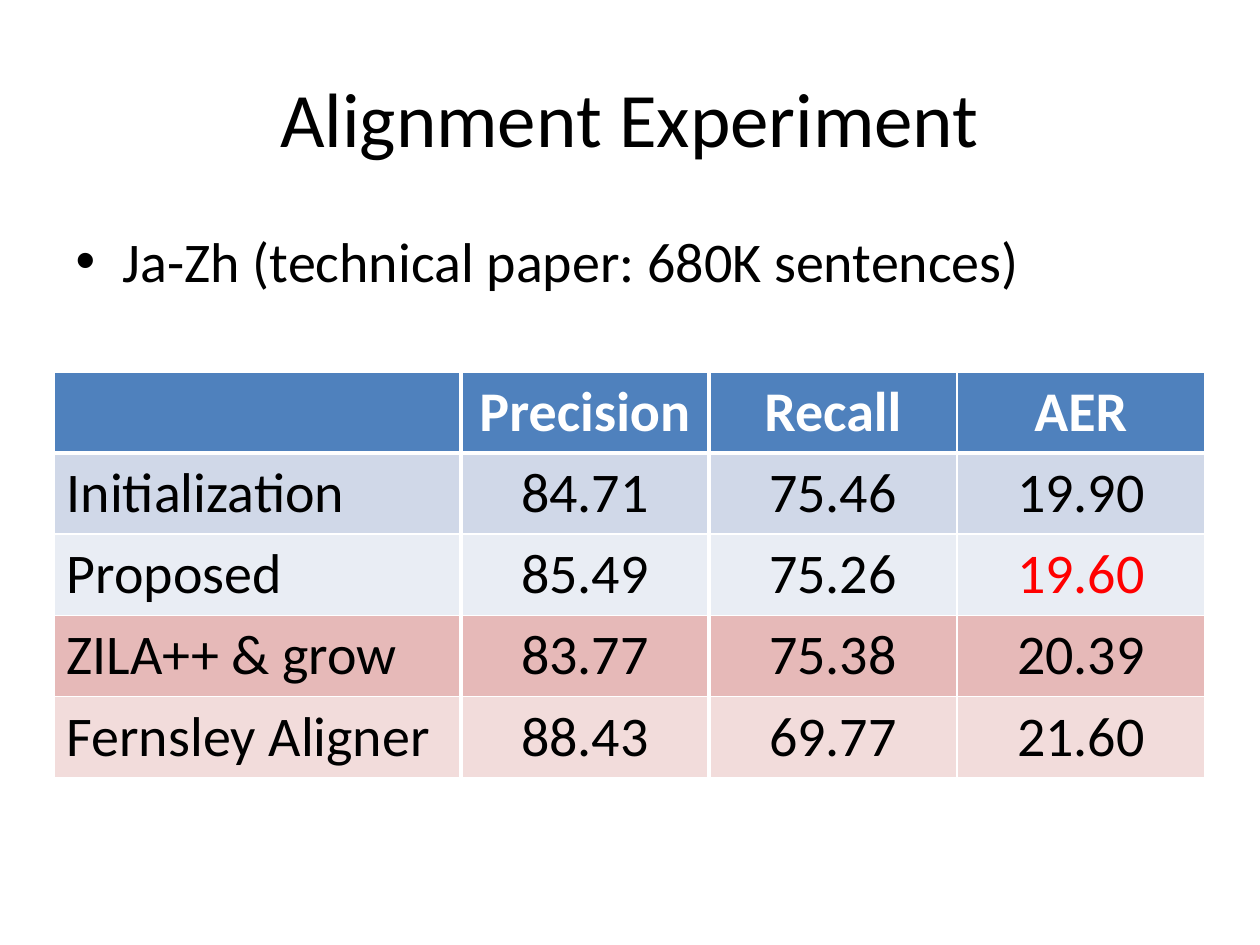
"""Build a slide comparing word alignment results in a table."""
from dataclasses import dataclass

from lxml.etree import SubElement
from pptx import Presentation
from pptx.dml.color import RGBColor
from pptx.enum.text import MSO_ANCHOR, PP_ALIGN
from pptx.oxml.ns import qn
from pptx.util import Emu, Pt

TITLE = "Alignment Experiment"
BULLET = "Ja-Zh (technical paper: 680K sentences)"
ROWS = [
    ("", "Precision", "Recall", "AER"),
    ("Initialization", "84.71", "75.46", "19.90"),
    ("Proposed", "85.49", "75.26", "19.60"),
    ("ZILA++ & grow", "83.77", "75.38", "20.39"),
    ("Fernsley Aligner", "88.43", "69.77", "21.60"),
]
BEST = (2, 3)

SLIDE_W, SLIDE_H = 1260, 945
TITLE_BOX = (63, 38, 1134, 157)
BODY_BOX = (63, 220, 1134, 624)
TABLE_LEFT, TABLE_TOP, ROW_H = 54, 372, 81
COL_W = (407, 248, 248, 248)
THICK_COLUMN_EDGES = (1, 2)
THICK_ROW_EDGES = (1,)


@dataclass(frozen=True)
class Theme:
    font: str = "Calibri"
    title_size: int = 44
    text_size: int = 32
    ink: str = "000000"
    white: str = "FFFFFF"
    best: str = "FF0000"
    row_fills: tuple = ("4F81BD", "D0D8E8", "E9EDF4", "E6B9B8", "F2DCDB")
    thin: int = 1
    thick: int = 3


THEME = Theme()


def px(n):
    return Emu(n * 914400 // 126)


def add_run(p, text, size, color, bold=False):
    r = p.add_run()
    r.text = text
    r.font.name = THEME.font
    r.font.size = Pt(size)
    r.font.bold = bold
    r.font.color.rgb = RGBColor.from_string(color)


def fill_placeholder(sp, box, text, size, align, anchor):
    sp.left, sp.top, sp.width, sp.height = map(px, box)
    tf = sp.text_frame
    tf.vertical_anchor = anchor
    p = tf.paragraphs[0]
    p.alignment = align
    add_run(p, text, size, THEME.ink)


def set_borders(cell, row, col):
    edges = {
        "L": col in THICK_COLUMN_EDGES,
        "R": col + 1 in THICK_COLUMN_EDGES,
        "T": row in THICK_ROW_EDGES,
        "B": row + 1 in THICK_ROW_EDGES,
    }
    tc_pr = cell._tc.get_or_add_tcPr()
    for side, is_thick in edges.items():
        width = Pt(THEME.thick if is_thick else THEME.thin)
        ln = SubElement(tc_pr, qn(f"a:ln{side}"), w=str(int(width)))
        fill = SubElement(ln, qn("a:solidFill"))
        SubElement(fill, qn("a:srgbClr"), val=THEME.white)


def cell_color(row, col):
    if row == 0:
        return THEME.white
    return THEME.best if (row, col) == BEST else THEME.ink


def add_results(s):
    frame = s.shapes.add_table(
        len(ROWS), len(COL_W), px(TABLE_LEFT), px(TABLE_TOP),
        px(sum(COL_W)), px(ROW_H * len(ROWS)))
    table = frame.table
    for column, width in zip(table.columns, COL_W):
        column.width = px(width)
    for row, values in enumerate(ROWS):
        table.rows[row].height = px(ROW_H)
        for col, text in enumerate(values):
            cell = table.cell(row, col)
            set_borders(cell, row, col)
            cell.fill.solid()
            cell.fill.fore_color.rgb = RGBColor.from_string(THEME.row_fills[row])
            p = cell.text_frame.paragraphs[0]
            p.alignment = PP_ALIGN.CENTER if col else PP_ALIGN.LEFT
            if text:
                add_run(p, text, THEME.text_size, cell_color(row, col), row == 0)


def main():
    prs = Presentation()
    prs.slide_width, prs.slide_height = px(SLIDE_W), px(SLIDE_H)
    s = prs.slides.add_slide(prs.slide_layouts[1])
    fill_placeholder(s.shapes.title, TITLE_BOX, TITLE, THEME.title_size,
                     PP_ALIGN.CENTER, MSO_ANCHOR.MIDDLE)
    fill_placeholder(s.placeholders[1], BODY_BOX, BULLET, THEME.text_size,
                     PP_ALIGN.LEFT, MSO_ANCHOR.TOP)
    add_results(s)
    prs.save("out.pptx")


if __name__ == "__main__":
    main()
